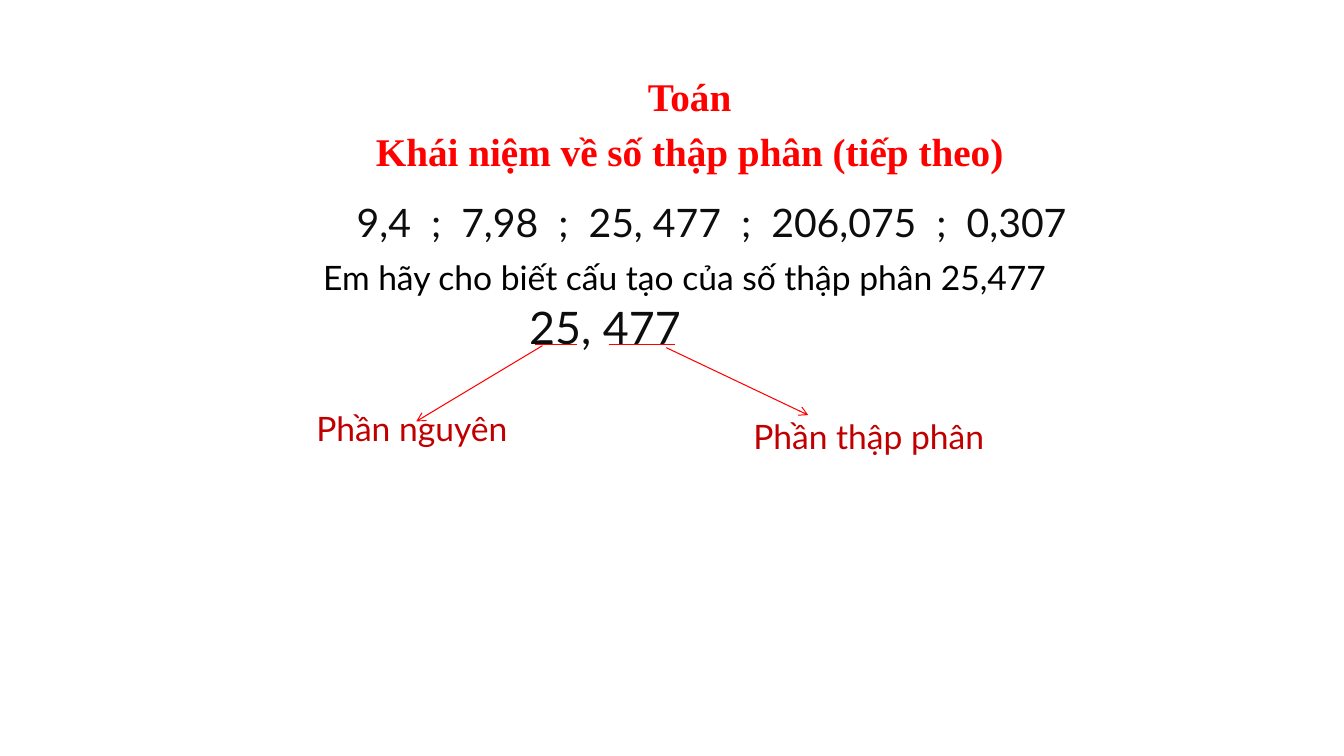
from lxml import etree
from pptx import Presentation
from pptx import util as u
from pptx.dml.color import RGBColor
from pptx.enum import shapes, text
from pptx.oxml.ns import qn

COLORS = {"title": "FF0000", "label": "C00000", "number": "0D0D0D",
          "question": "000000", "line": "FF0000"}

STYLES = {
    "title": {"name": "Times New Roman", "size": u.Pt(28), "bold": True},
    "label": {"name": "Lato", "size": u.Pt(24)},
    "question": {"name": "Lato", "size": u.Pt(24)},
    "examples": {"name": "Lato", "size": u.Pt(28)},
    "number": {"name": "Lato", "size": u.Pt(32)},
}

CENTER, LEFT = text.PP_ALIGN.CENTER, text.PP_ALIGN.LEFT

TEXTS = [
    (["Phần thập phân"], "label", "label", CENTER, (17.35, 10.36, 9.09, 1.27)),
    (["Phần nguyên"], "label", "label", CENTER, (6.99, 10.16, 6.78, 1.27)),
    (["25, 477"], "number", "number", CENTER, (11.86, 7.42, 6.78, 1.63)),
    (["Em hãy cho biết cấu tạo của số thập phân 25,477 "], "question", "question",
     CENTER, (7.42, 6.35, 19.89, 1.27)),
    (["9,4  ;  7,98  ;  25, 477  ;  206,075  ;  0,307"], "examples", "number",
     LEFT, (8.74, 4.88, 19.48, 2.11)),
    (["Toán", "Khái niệm về số thập phân (tiếp theo)"], "title", "title",
     CENTER, (6.05, 1.7, 22.66, 2.11)),
]

UNDERLINE_Y = 8.69
UNDERLINES = [(13.49, 14.55), (15.34, 17.02)]
ARROWS = [(16.79, 8.76, 20.37, 10.46), (13.67, 8.71, 10.49, 10.62)]


def add_text(page, lines, style, color, align, place):
    box = page.shapes.add_textbox(*map(u.Cm, place))
    frame = box.text_frame
    frame.word_wrap = True
    frame.text = "\n".join(lines)
    for para in frame.paragraphs:
        para.alignment = align
        spacing = etree.SubElement(para._p.get_or_add_pPr(), qn("a:spcBef"))
        etree.SubElement(spacing, qn("a:spcPct"), val="20000")
        font = para.runs[0].font
        for key, value in STYLES[style].items():
            setattr(font, key, value)
        font.color.rgb = RGBColor.from_string(COLORS[color])


def add_line(page, ends, arrow=False):
    line = page.shapes.add_connector(shapes.MSO_CONNECTOR.STRAIGHT, *map(u.Cm, ends))
    line.line.width = u.Pt(0.75)
    line.line.color.rgb = RGBColor.from_string(COLORS["line"])
    if arrow:
        etree.SubElement(line.line._get_or_add_ln(), qn("a:tailEnd"), type="arrow")
    etree.SubElement(line._element.spPr, qn("a:effectLst"))


def main():
    deck = Presentation()
    deck.slide_width, deck.slide_height = u.Cm(33.87), u.Cm(19.05)
    page = deck.slides.add_slide(deck.slide_layouts[6])
    for entry in TEXTS[:3]:
        add_text(page, *entry)
    for start, end in UNDERLINES:
        add_line(page, (start, UNDERLINE_Y, end, UNDERLINE_Y))
    for ends in ARROWS:
        add_line(page, ends, arrow=True)
    for entry in TEXTS[3:]:
        add_text(page, *entry)
    deck.save("out.pptx")


if __name__ == "__main__":
    main()
